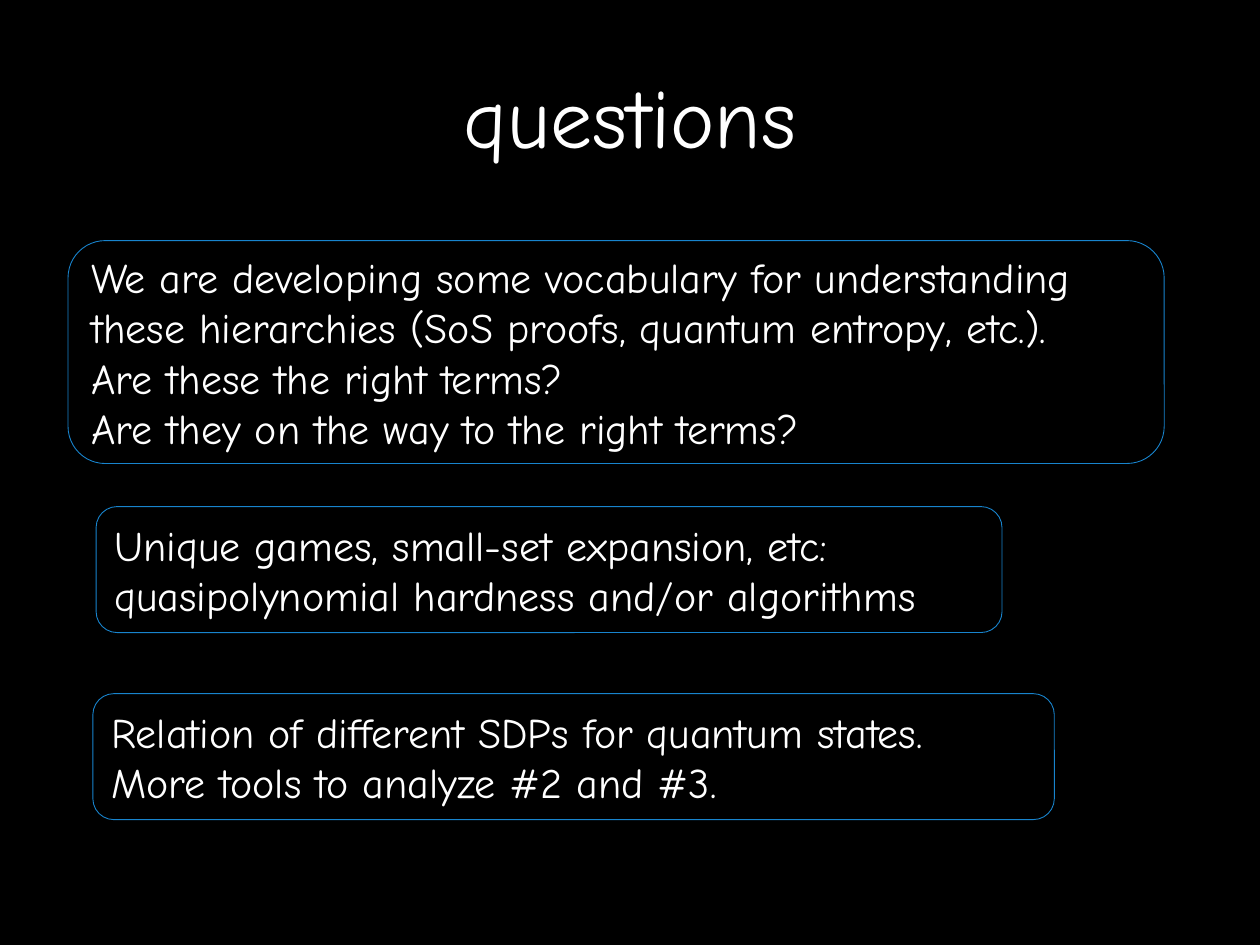
from pptx import Presentation
from pptx.dml.color import RGBColor
from pptx.enum.shapes import MSO_SHAPE
from pptx.enum.text import MSO_ANCHOR, PP_ALIGN
from pptx.util import Pt

ROUNDED = MSO_SHAPE.ROUNDED_RECTANGLE
MIDDLE = MSO_ANCHOR.MIDDLE
LEFT, CENTER = PP_ALIGN.LEFT, PP_ALIGN.CENTER

BLACK = RGBColor(0x00, 0x00, 0x00)
WHITE = RGBColor(0xFF, 0xFF, 0xFF)
BLUE = RGBColor(0x18, 0x84, 0xCD)

FONT_NAME = "Comic Neue"

# Each question: left, top, width, height in points, then its lines
QUESTIONS = [
    (38.9, 137.5, 626.4, 127.4, [
        "We are developing some vocabulary for understanding",
        "these hierarchies (SoS proofs, quantum entropy, etc.).",
        "Are these the right terms?",
        "Are they on the way to the right terms?",
    ]),
    (54.9, 289.5, 517.7, 72, [
        "Unique games, small-set expansion, etc:",
        "quasipolynomial hardness and/or algorithms",
    ]),
    (53.1, 396.4, 549.4, 72, [
        "Relation of different SDPs for quantum states.",
        "More tools to analyze #2 and #3.",
    ]),
]


def write_lines(frame, lines, size, alignment):
    """Fill a frame with one paragraph, its lines parted by line breaks."""
    frame.word_wrap = True
    frame.vertical_anchor = MIDDLE
    paragraph = frame.paragraphs[0]
    paragraph.alignment = alignment
    for number, line in enumerate(lines):
        if number:
            paragraph.add_line_break()
        run = paragraph.add_run()
        run.text = line
        text_format = {"name": FONT_NAME, "size": Pt(size), "bold": False}
        for attribute, value in text_format.items():
            setattr(run.font, attribute, value)
        run.font.color.rgb = WHITE


def place_title(slide, text):
    title = slide.shapes.title
    position = {"left": 54, "top": 9.4, "width": 612, "height": 112.3}
    for attribute, value in position.items():
        setattr(title, attribute, Pt(value))
    write_lines(title.text_frame, [text], 48, CENTER)


def add_question(slide, left, top, width, height, lines):
    question = slide.shapes.add_shape(
        ROUNDED, Pt(left), Pt(top), Pt(width), Pt(height))
    question.shadow.inherit = False
    question.fill.background()
    question.line.color.rgb = BLUE
    question.line.width = Pt(0.5)
    write_lines(question.text_frame, lines, 24, LEFT)


def main():
    deck = Presentation()
    deck.slide_width, deck.slide_height = Pt(720), Pt(540)
    slide = deck.slides.add_slide(deck.slide_layouts[5])

    # Black background
    slide.background.fill.solid()
    slide.background.fill.fore_color.rgb = BLACK

    # Title and outlined questions
    place_title(slide, "questions")
    for question in QUESTIONS:
        add_question(slide, *question)

    deck.save("out.pptx")


if __name__ == "__main__":
    main()
